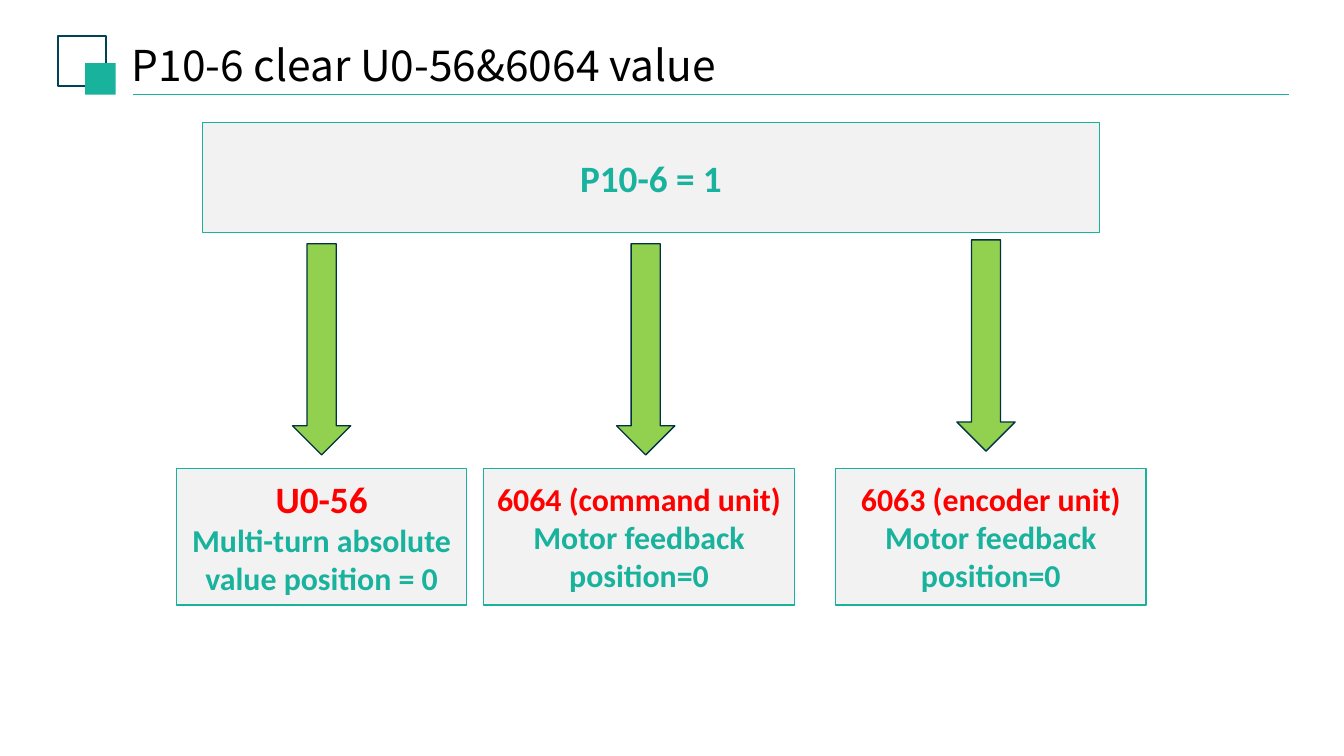
from dataclasses import dataclass

from lxml import etree
from pptx import Presentation
from pptx.dml.color import RGBColor
from pptx.enum.shapes import MSO_CONNECTOR, MSO_SHAPE
from pptx.enum.text import MSO_ANCHOR, PP_ALIGN
from pptx.oxml.ns import qn
from pptx.util import Inches, Pt

RECT = MSO_SHAPE.RECTANGLE
DOWN_ARROW = MSO_SHAPE.DOWN_ARROW
STRAIGHT = MSO_CONNECTOR.STRAIGHT
MIDDLE = MSO_ANCHOR.MIDDLE
LEFT, CENTER = PP_ALIGN.LEFT, PP_ALIGN.CENTER


@dataclass(frozen=True)
class Theme:
    teal: str = "18B29D"
    navy: str = "004358"
    panel: str = "F2F2F2"
    green: str = "92D050"
    arrow_line: str = "003241"
    red: str = "FF0000"
    black: str = "000000"
    title_font: str = "Noto Sans CJK SC"
    body_font: str = "Calibri"
    title_size: int = 32
    large: int = 28
    normal: int = 24


THEME = Theme()


@dataclass(frozen=True)
class Box:
    left: float
    top: float
    width: float
    height: float


@dataclass(frozen=True)
class Result:
    left: float
    width: float
    heading: str
    heading_size: int
    detail: str
    arrow_left: float
    arrow_top: float


RESULTS = [
    Result(1.85, 3.03, "U0-56", THEME.large,
           "Multi-turn absolute value position = 0", 3.06, 2.55),
    Result(5.06, 3.25, "6064 (command unit)", THEME.normal,
           "Motor feedback position=0", 6.45, 2.55),
    Result(8.74, 3.25, "6063 (encoder unit)", THEME.normal,
           "Motor feedback position=0", 10.01, 2.51),
]
RESULT_TOP, RESULT_HEIGHT = 4.9, 1.43
ARROW_WIDTH, ARROW_HEIGHT = 0.61, 2.21


def rgb(color: str) -> RGBColor:
    return RGBColor.from_string(color)


def place(box: Box) -> list:
    return [Inches(v) for v in (box.left, box.top, box.width, box.height)]


def add_shape(s, kind, box: Box, fill: str = "", line: str = "", weight: float = 1):
    sp = s.shapes.add_shape(kind, *place(box))
    sp.shadow.inherit = False
    if fill:
        sp.fill.solid()
        sp.fill.fore_color.rgb = rgb(fill)
    else:
        sp.fill.background()
    if line:
        sp.line.color.rgb = rgb(line)
        sp.line.width = Pt(weight)
    else:
        sp.line.fill.background()
    return sp


def add_text(tf, text: str, *, size: int, color: str, font: str = THEME.body_font,
             bold: bool = True, align=CENTER) -> None:
    tf.word_wrap = True
    tf.vertical_anchor = MIDDLE
    p = tf.paragraphs[0] if not tf.text else tf.add_paragraph()
    p.alignment = align
    r = p.add_run()
    r.text = text
    r.font.name = font
    r.font.size = Pt(size)
    r.font.bold = bold
    r.font.color.rgb = rgb(color)


def add_header(s, title: str) -> None:
    rule = s.shapes.add_connector(
        STRAIGHT, Inches(1.39), Inches(0.99), Inches(13.48), Inches(0.99))
    rule.line.color.rgb = rgb(THEME.teal)
    rule.line.width = Pt(1.25)
    etree.SubElement(rule._element.spPr, qn("a:effectLst"))
    add_shape(s, RECT, Box(0.61, 0.38, 0.5, 0.52), line=THEME.navy, weight=1.5)
    add_shape(s, RECT, Box(0.89, 0.66, 0.32, 0.33), fill=THEME.teal)

    tf = s.shapes.add_textbox(*place(Box(1.38, 0.41, 8.27, 0.54))).text_frame
    tf.margin_left = tf.margin_right = tf.margin_top = tf.margin_bottom = 0
    add_text(tf, title, size=THEME.title_size, color=THEME.black,
             font=THEME.title_font, bold=False, align=LEFT)


def add_panel(s, box: Box):
    return add_shape(s, RECT, box, fill=THEME.panel, line=THEME.teal).text_frame


def add_result(s, result: Result) -> None:
    add_shape(s, DOWN_ARROW,
              Box(result.arrow_left, result.arrow_top, ARROW_WIDTH, ARROW_HEIGHT),
              fill=THEME.green, line=THEME.arrow_line)
    tf = add_panel(s, Box(result.left, RESULT_TOP, result.width, RESULT_HEIGHT))
    add_text(tf, result.heading, size=result.heading_size, color=THEME.red)
    add_text(tf, result.detail, size=THEME.normal, color=THEME.teal)


def main() -> None:
    prs = Presentation()
    prs.slide_width, prs.slide_height = Inches(14.06), Inches(7.91)
    s = prs.slides.add_slide(prs.slide_layouts[6])
    add_header(s, "P10-6 clear U0-56&6064 value")
    add_text(add_panel(s, Box(2.12, 1.28, 9.38, 1.15)), "P10-6 = 1",
             size=THEME.large, color=THEME.teal)
    for result in RESULTS:
        add_result(s, result)
    prs.save("out.pptx")


if __name__ == "__main__":
    main()
